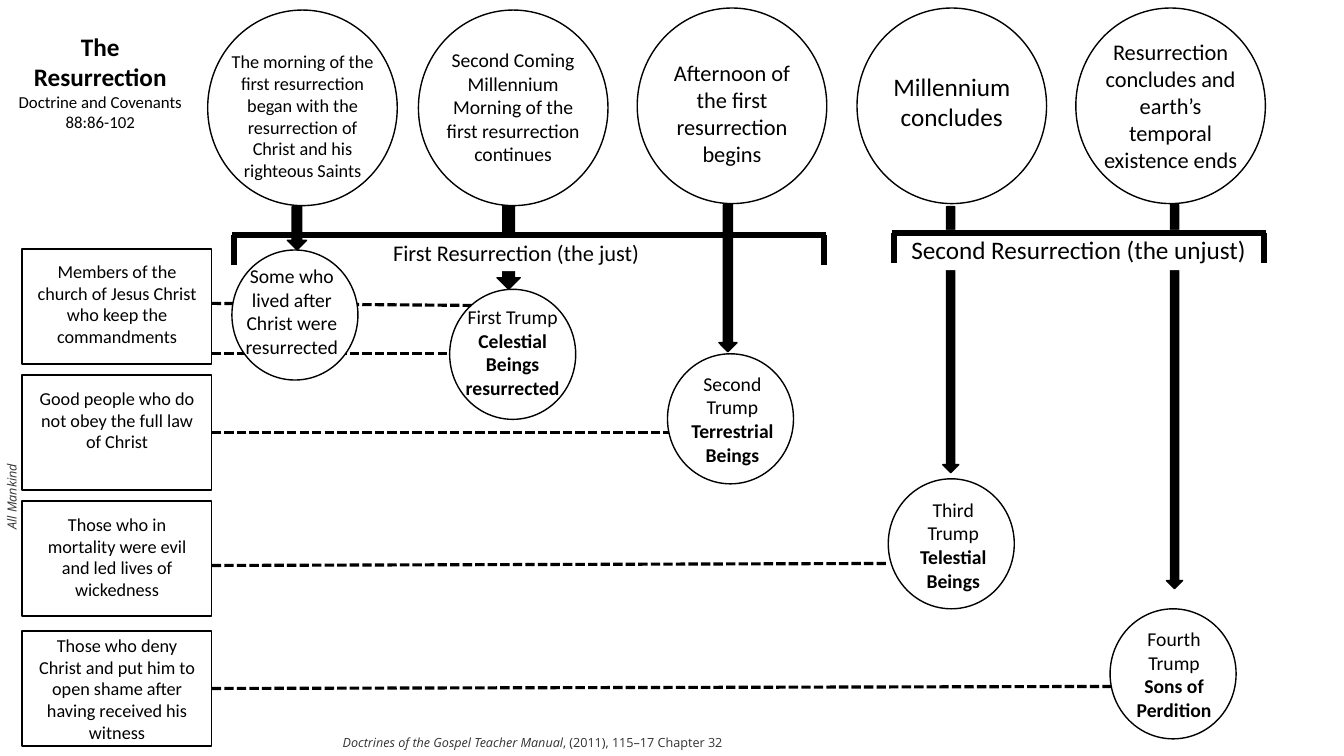
from pptx import Presentation
from pptx.dml.color import RGBColor
from pptx.enum.dml import MSO_LINE
from pptx.enum.shapes import MSO_CONNECTOR, MSO_SHAPE
from pptx.enum.text import MSO_ANCHOR, MSO_AUTO_SIZE, PP_ALIGN
from pptx.oxml.ns import qn
from pptx.util import Inches, Pt
from lxml import etree

CENTER, LEFT = PP_ALIGN.CENTER, PP_ALIGN.LEFT
TOP = MSO_ANCHOR.TOP
STRAIGHT = MSO_CONNECTOR.STRAIGHT
ELLIPSE, RECT, DOWN_ARROW = MSO_SHAPE.OVAL, MSO_SHAPE.RECTANGLE, MSO_SHAPE.DOWN_ARROW
DASH = MSO_LINE.SQUARE_DOT
NO_AUTOFIT = MSO_AUTO_SIZE.NONE

COLORS = {"ink": "000000", "paper": "FFFFFF", "note": "333333"}
BODY, NOTE = "Calibri", "Open Sans"
RIGHT_SIDE = 3
BIG_W, BIG_H = 18.8, 19.4
SMALL_W, SMALL_H = 12.5, 12.9
BOX_X, BOX_W, BOX_H = 2.2, 18.8, 11.4

EVENTS = [
    (20.6, 1, 4.5, 13, ["The morning of the first resurrection began with the "
                        "resurrection of Christ and his righteous Saints"]),
    (41.5, 1, 4.3, 14, ["Second Coming", "Millennium",
                        "Morning of the first resurrection continues"]),
    (63.2, 0.8, 5.4, 16, ["Afternoon of the first resurrection begins"]),
    (85, 0.8, 6.6, 18, ["Millennium concludes"]),
    (106.7, 0.8, 3.3, 16, ["Resurrection concludes and earth’s temporal existence ends"]),
]
GROUPS = [
    (24.7, 1.1, "Members of the church of Jesus Christ who keep the commandments"),
    (37.2, 1.2, "Good people who do not obey the full law of Christ"),
    (49.7, 1.2, "Those who in mortality were evil and led lives of wickedness"),
    (62.6, 0.3, "Those who deny Christ and put him to open shame after "
                "having received his witness"),
]
TRUMPS = [
    (23, 24.8, 23.3, 25.7, "Some who lived after Christ were resurrected", None),
    (44.6, 28.7, 45.2, 29.8, "First Trump", "Celestial Beings resurrected"),
    (66.2, 35.1, 67, 36.4, "Second Trump", "Terrestrial Beings"),
    (88.1, 47.5, 88.9, 48.9, "Third Trump", "Telestial Beings"),
    (110.1, 60.4, 110.8, 61.7, "Fourth Trump", "Sons of Perdition"),
]
DASHES = [
    (30.1, 46.8, 30.3, None), (35.1, 44.6, 35.1, None), (42.9, 72.6, 42.9, 1),
    (56.1, 88, 55.9, None), (67.9, 110.4, 68.1, 3),
]


def grid(*cells):
    return [Inches(n / 10) for n in cells]


def color(name):
    return RGBColor.from_string(COLORS[name])


def write(tf, paragraphs, align=CENTER, font=BODY, ink="ink"):
    for i, runs in enumerate(paragraphs):
        p = tf.paragraphs[0] if i == 0 else tf.add_paragraph()
        p.alignment = align
        for text, size, style in runs:
            r = p.add_run()
            r.text = text
            r.font.name = font
            r.font.size = Pt(size)
            r.font.bold = style == "b"
            r.font.italic = style == "i"
            r.font.color.rgb = color(ink)


def add_text(shapes, place, paragraphs, wrap=True, **look):
    sp = shapes.add_textbox(*grid(*place))
    sp.text_frame.word_wrap = wrap
    write(sp.text_frame, paragraphs, **look)
    return sp


def add_shape(shapes, kind, place, fill="paper"):
    sp = shapes.add_shape(kind, *grid(*place))
    sp.shadow.inherit = False
    sp.fill.solid()
    sp.fill.fore_color.rgb = color(fill)
    sp.line.color.rgb = color("ink")
    sp.line.width = Pt(1)
    return sp


def add_circle(s, circle, label, paragraphs):
    shapes = s.shapes.add_group_shape().shapes
    add_shape(shapes, ELLIPSE, circle)
    add_text(shapes, label, paragraphs)


def add_box(s, y, inset, text):
    sp = add_shape(s.shapes, RECT, (BOX_X, y, BOX_W, BOX_H))
    tf = sp.text_frame
    tf.word_wrap = True
    tf.vertical_anchor = TOP
    tf.margin_left = tf.margin_right = Inches(0.14)
    tf.margin_top, tf.margin_bottom = grid(inset, 0)
    write(tf, [[(text, 13, "")]])
    return sp


def add_line(shapes, x1, y1, x2, y2, width, dash=None):
    line = shapes.add_connector(STRAIGHT, *grid(x1, y1, x2, y2))
    line.line.color.rgb = color("ink")
    line.line.width = Pt(width)
    if dash:
        line.line.dash_style = dash
    etree.SubElement(line._element.spPr, qn("a:effectLst"))
    return line


def add_bracket(s, left, right, y, label, text, size):
    sp = add_text(s.shapes, label, [[(text, size, "")]], align=LEFT)
    sp.fill.solid()
    sp.fill.fore_color.rgb = color("paper")
    shapes = s.shapes.add_group_shape().shapes
    for x in (left, right):
        add_line(shapes, x, y, x, y + 3, 4.5)
    add_line(shapes, left - 0.2, y, right + 0.2, y, 4.5)


def add_arrows(s, *places):
    for place in places:
        add_shape(s.shapes, DOWN_ARROW, place, "ink")


def add_title(s):
    sp = s.shapes.title
    sp.left, sp.top, sp.width, sp.height = grid(0.2, 2.6, 19.5, 11.1)
    tf = sp.text_frame
    tf.auto_size = NO_AUTOFIT
    tf.word_wrap = True
    tf.vertical_anchor = TOP
    write(tf, [[("The Resurrection", 18, "b")],
               [("Doctrine and Covenants 88:86-102", 12, "")]])


def main():
    prs = Presentation()
    prs.slide_width, prs.slide_height = grid(133.3, 75)
    s = prs.slides.add_slide(prs.slide_layouts[5])
    add_title(s)

    add_arrows(s, (93.5, 20.5, 1.6, 26.4), (115.7, 20.3, 1.6, 38.1),
               (49.3, 19.8, 2.3, 8.9))
    boxes = [add_box(s, *group) for group in GROUPS]
    for y1, x2, y2, box in DASHES:
        line = add_line(s.shapes, BOX_X + BOX_W, y1, x2, y2, 2.25, DASH)
        if box is not None:
            line.begin_connect(boxes[box], RIGHT_SIDE)

    for x, y, text_y, size, lines in EVENTS:
        add_circle(s, (x, y, BIG_W, BIG_H), (x + 1.3, text_y, 16.2, 14),
                   [[(text, size, "")] for text in lines])
    for x, y, text_x, text_y, name, beings in TRUMPS:
        paragraphs = [[(name, 14, "")]]
        if beings:
            paragraphs.append([(beings, 14, "b")])
        add_circle(s, (x, y, SMALL_W, SMALL_H), (text_x, text_y, 11.3, 10.4), paragraphs)

    add_bracket(s, 23.2, 81.7, 23.3, (38, 23.2, 35.1, 3.7),
                "First Resurrection (the just)", 16)
    add_bracket(s, 88.7, 125.4, 23.1, (89.4, 22.8, 39.7, 4),
                "Second Resurrection (the unjust)", 18)
    add_arrows(s, (28.5, 20.5, 1.9, 4.3), (71.3, 20.3, 1.8, 14.6))

    add_text(s.shapes, (33, 72.4, 40.5, 2.5),
             [[("Doctrines of the Gospel Teacher Manual", 9, "i"),
               (", (2011), 115–17 Chapter 32", 9, "")]],
             wrap=False, align=LEFT, font=NOTE, ink="note")
    side = add_text(s.shapes, (-3.1, 48, 8.5, 2.5), [[("All Mankind", 9, "i")]],
                    wrap=False, align=LEFT, font=NOTE, ink="note")
    side.rotation = 270
    prs.save("out.pptx")


if __name__ == "__main__":
    main()
